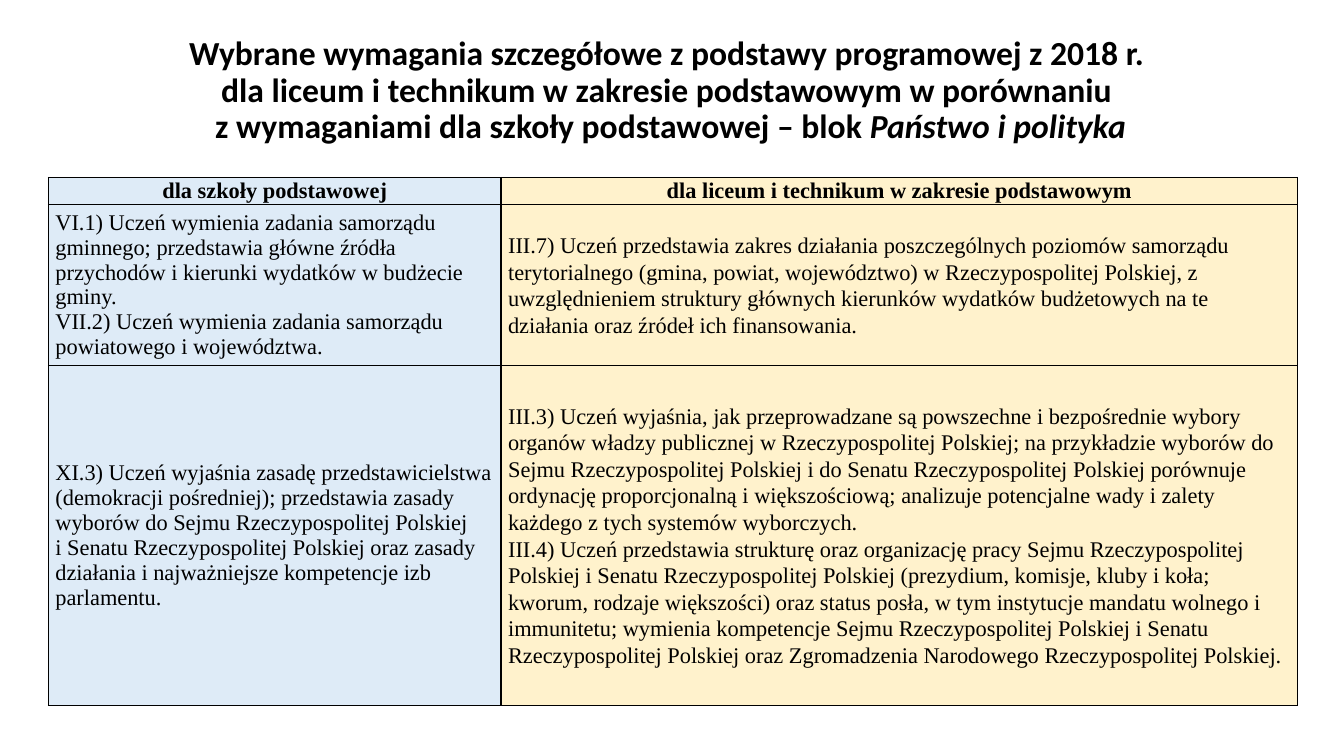
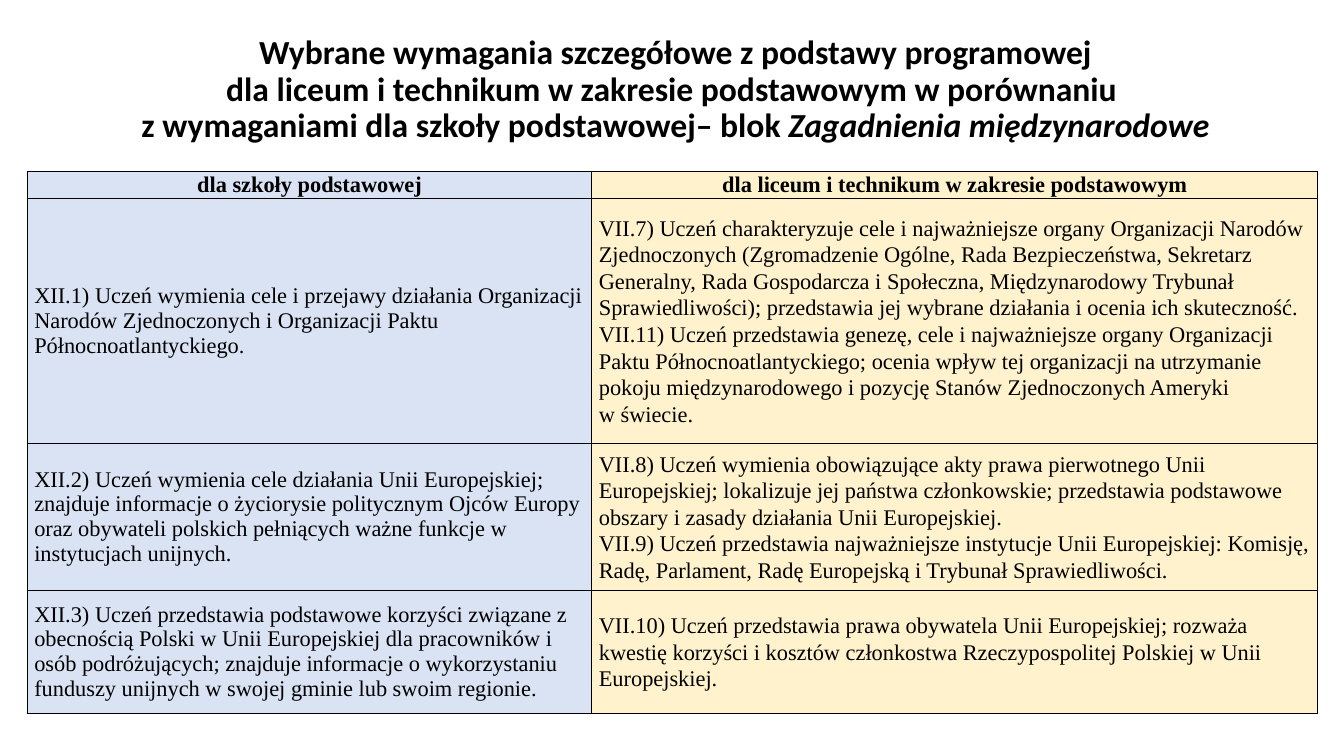
from lxml import etree
from pptx import Presentation
from pptx.dml.color import RGBColor
from pptx.enum.text import MSO_ANCHOR, PP_ALIGN
from pptx.oxml.ns import qn
from pptx.util import Inches, Pt

BLACK = RGBColor(0x00, 0x00, 0x00)
PALE_BLUE = RGBColor(0xDE, 0xEB, 0xF7)
LAVENDER = RGBColor(0xDA, 0xE3, 0xF3)
CREAM = RGBColor(0xFF, 0xF2, 0xCC)
CENTER, LEFT = PP_ALIGN.CENTER, PP_ALIGN.LEFT
MIDDLE = MSO_ANCHOR.MIDDLE
TITLE_FONT, TABLE_FONT = "Calibri", "Times New Roman"
TITLE_SIZE = (11.5, 1.45)
SPACINGS = (1.0, 1.07)
HEADERS = ("dla szkoły podstawowej", "dla liceum i technikum w zakresie podstawowym")

SLIDES = [
    {
        "title": "Wybrane wymagania szczegółowe z podstawy programowej z 2018 r. \n"
                 "dla liceum i technikum w zakresie podstawowym w porównaniu \n"
                 "z wymaganiami dla szkoły podstawowej – blok ",
        "block": "Państwo i polityka",
        "title_at": (0.9, 0.18),
        "table_at": (0.48, 1.76),
        "widths": (4.49, 7.9),
        "heights": (0.25, 1.58, 3.37),
        "fills": (PALE_BLUE, CREAM),
        "rows": [
            (
                ["VI.1) Uczeń wymienia zadania samorządu gminnego; przedstawia główne źródła "
                 "przychodów i kierunki wydatków w budżecie gminy.",
                 "VII.2) Uczeń wymienia zadania samorządu powiatowego i województwa."],
                ["III.7) Uczeń przedstawia zakres działania poszczególnych poziomów samorządu "
                 "terytorialnego (gmina, powiat, województwo) w Rzeczypospolitej Polskiej, "
                 "z uwzględnieniem struktury głównych kierunków wydatków budżetowych na te "
                 "działania oraz źródeł ich finansowania."],
            ),
            (
                ["XI.3) Uczeń wyjaśnia zasadę przedstawicielstwa (demokracji pośredniej); "
                 "przedstawia zasady wyborów do Sejmu Rzeczypospolitej Polskiej",
                 "i Senatu Rzeczypospolitej Polskiej oraz zasady działania i najważniejsze "
                 "kompetencje izb parlamentu."],
                ["III.3) Uczeń wyjaśnia, jak przeprowadzane są powszechne i bezpośrednie wybory "
                 "organów władzy publicznej w Rzeczypospolitej Polskiej; na przykładzie wyborów do "
                 "Sejmu Rzeczypospolitej Polskiej i do Senatu Rzeczypospolitej Polskiej porównuje "
                 "ordynację proporcjonalną i większościową; analizuje potencjalne wady i zalety "
                 "każdego z tych systemów wyborczych.",
                 "III.4) Uczeń przedstawia strukturę oraz organizację pracy Sejmu Rzeczypospolitej "
                 "Polskiej i Senatu Rzeczypospolitej Polskiej (prezydium, komisje, kluby i koła; "
                 "kworum, rodzaje większości) oraz status posła, w tym instytucje mandatu wolnego "
                 "i immunitetu; wymienia kompetencje Sejmu Rzeczypospolitej Polskiej i Senatu "
                 "Rzeczypospolitej Polskiej oraz Zgromadzenia Narodowego Rzeczypospolitej Polskiej."],
            ),
        ],
    },
    {
        "title": "Wybrane wymagania szczegółowe z podstawy programowej\n"
                 "dla liceum i technikum w zakresie podstawowym w porównaniu \n"
                 "z wymaganiami dla szkoły podstawowej– blok ",
        "block": "Zagadnienia międzynarodowe",
        "title_at": (0.95, 0.17),
        "table_at": (0.27, 1.7),
        "widths": (5.6, 7.2),
        "heights": (0.26, 2.43, 1.46, 1.22),
        "fills": (LAVENDER, CREAM),
        "rows": [
            (
                ["XII.1) Uczeń wymienia cele i przejawy działania Organizacji Narodów "
                 "Zjednoczonych i Organizacji Paktu Północnoatlantyckiego."],
                ["VII.7) Uczeń charakteryzuje cele i najważniejsze organy Organizacji Narodów "
                 "Zjednoczonych (Zgromadzenie Ogólne, Rada Bezpieczeństwa, Sekretarz Generalny, "
                 "Rada Gospodarcza i Społeczna, Międzynarodowy Trybunał Sprawiedliwości); "
                 "przedstawia jej wybrane działania i ocenia ich skuteczność.",
                 "VII.11) Uczeń przedstawia genezę, cele i najważniejsze organy Organizacji Paktu "
                 "Północnoatlantyckiego; ocenia wpływ tej organizacji na utrzymanie pokoju "
                 "międzynarodowego i pozycję Stanów Zjednoczonych Ameryki",
                 "w świecie."],
            ),
            (
                ["XII.2) Uczeń wymienia cele działania Unii Europejskiej; znajduje informacje "
                 "o życiorysie politycznym Ojców Europy oraz obywateli polskich pełniących ważne "
                 "funkcje w instytucjach unijnych."],
                ["VII.8) Uczeń wymienia obowiązujące akty prawa pierwotnego Unii Europejskiej; "
                 "lokalizuje jej państwa członkowskie; przedstawia podstawowe obszary i zasady "
                 "działania Unii Europejskiej.",
                 "VII.9) Uczeń przedstawia najważniejsze instytucje Unii Europejskiej: Komisję, "
                 "Radę, Parlament, Radę Europejską i Trybunał Sprawiedliwości."],
            ),
            (
                ["XII.3) Uczeń przedstawia podstawowe korzyści związane z obecnością Polski w Unii "
                 "Europejskiej dla pracowników i osób podróżujących; znajduje informacje "
                 "o wykorzystaniu funduszy unijnych w swojej gminie lub swoim regionie."],
                ["VII.10) Uczeń przedstawia prawa obywatela Unii Europejskiej; rozważa kwestię "
                 "korzyści i kosztów członkostwa Rzeczypospolitej Polskiej w Unii Europejskiej."],
            ),
        ],
    },
]


def add_text(p, text, font=TABLE_FONT, size=16, bold=False, italic=False,
             align=LEFT, spacing=1.0):
    p.alignment = align
    p.line_spacing = spacing
    for i, line in enumerate(text.split("\n")):
        if i:
            p.add_line_break()
        r = p.add_run()
        r.text = line
        r.font.name = font
        r.font.size = Pt(size)
        r.font.bold = bold
        r.font.italic = italic
        r.font.color.rgb = BLACK


def add_title(s, spec_at, title, block):
    box = s.shapes.add_textbox(*map(Inches, spec_at + TITLE_SIZE))
    tf = box.text_frame
    tf.word_wrap = True
    tf.vertical_anchor = MIDDLE
    for text, italic in ((title, False), (block, True)):
        add_text(tf.paragraphs[0], text, font=TITLE_FONT, size=24, bold=True,
                 italic=italic, align=CENTER, spacing=0.9)


def add_borders(cell):
    tc_pr = cell._tc.get_or_add_tcPr()
    for side in ("a:lnL", "a:lnR", "a:lnT", "a:lnB"):
        ln = etree.SubElement(tc_pr, qn(side), w=str(Pt(1)))
        fill = etree.SubElement(ln, qn("a:solidFill"))
        etree.SubElement(fill, qn("a:srgbClr"), val=str(BLACK))


def fill_cell(cell, paragraphs, color, **fmt):
    add_borders(cell)
    cell.fill.solid()
    cell.fill.fore_color.rgb = color
    cell.vertical_anchor = MIDDLE
    cell.margin_left = cell.margin_right = Inches(0.07)
    cell.margin_top = cell.margin_bottom = 0
    tf = cell.text_frame
    for i, text in enumerate(paragraphs):
        add_text(tf.add_paragraph() if i else tf.paragraphs[0], text, **fmt)


def add_comparison(s, at, widths, heights, fills, rows):
    size = (sum(widths), sum(heights))
    table = s.shapes.add_table(len(heights), len(widths), *map(Inches, at + size)).table
    table.first_row = table.horz_banding = False
    for column, width in zip(table.columns, widths):
        column.width = Inches(width)
    for row, height in zip(table.rows, heights):
        row.height = Inches(height)
    for c, color in enumerate(fills):
        fill_cell(table.cell(0, c), [HEADERS[c]], color, bold=True, align=CENTER)
        for r, row in enumerate(rows, 1):
            fill_cell(table.cell(r, c), row[c], color, spacing=SPACINGS[c])


def main():
    prs = Presentation()
    prs.slide_width, prs.slide_height = Inches(13.33), Inches(7.5)
    for d in SLIDES:
        s = prs.slides.add_slide(prs.slide_layouts[6])
        add_title(s, d["title_at"], d["title"], d["block"])
        add_comparison(s, d["table_at"], d["widths"], d["heights"], d["fills"], d["rows"])
    prs.save("out.pptx")


if __name__ == "__main__":
    main()
